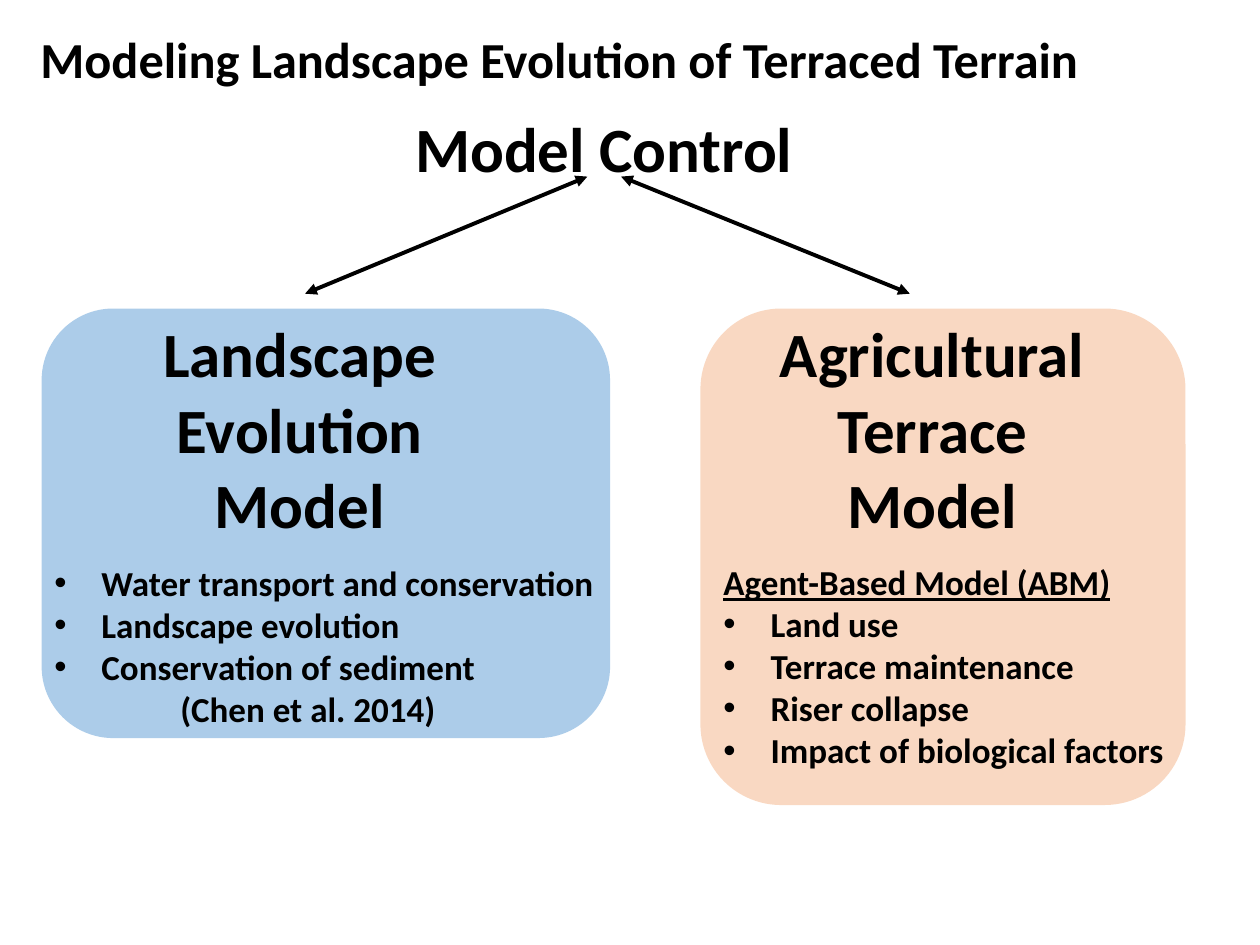
"""Build the slide on modeling the landscape evolution of terraced terrain."""
import pptx
import pptx.dml.color
import pptx.enum.shapes
import pptx.enum.text
import pptx.oxml.ns
import pptx.util
from lxml import etree
from pptx.util import Cm

BLACK = pptx.dml.color.RGBColor(0x00, 0x00, 0x00)
BLUE = pptx.dml.color.RGBColor(0x5B, 0x9B, 0xD5)
ORANGE = pptx.dml.color.RGBColor(0xF4, 0xB1, 0x83)
qn = pptx.oxml.ns.qn


def format_text(text_frame, size, alignment):
    text_frame.word_wrap = True
    text_frame.auto_size = pptx.enum.text.MSO_AUTO_SIZE.NONE
    for paragraph in text_frame.paragraphs:
        paragraph.alignment = alignment
        paragraph.space_before = pptx.util.Pt(0)
        for run in paragraph.runs:
            run.font.name = "Calibri"
            run.font.size = pptx.util.Pt(size)
            run.font.bold = True
            run.font.color.rgb = BLACK


def add_heading(slide, text, left, top, width, height):
    heading = slide.shapes.add_textbox(left, top, width, height)
    heading.text_frame.text = text
    format_text(heading.text_frame, 36, pptx.enum.text.PP_ALIGN.CENTER)


presentation = pptx.Presentation()
presentation.slide_width = Cm(25.4)
presentation.slide_height = Cm(19.05)
slide = presentation.slides.add_slide(presentation.slide_layouts[3])
title, *lists = slide.placeholders

title.left, title.top, title.width, title.height = Cm(0.56), Cm(0.03), Cm(23.27), Cm(2.46)
title.text_frame.text = "Modeling Landscape Evolution of Terraced Terrain"
title.text_frame.vertical_anchor = pptx.enum.text.MSO_ANCHOR.MIDDLE
title.text_frame.paragraphs[0].line_spacing = 0.9
format_text(title.text_frame, 28.8, pptx.enum.text.PP_ALIGN.LEFT)

add_heading(slide, "Model Control", Cm(7.54), Cm(2.08), Cm(9.27), Cm(1.8))

models = [
    ("Landscape Evolution Model", BLUE, 50,
     (0.84, 11.46, 8.66), 2.31, (0.84, 11.2, 12.42, 3.68),
     ["Water transport and conservation", "Landscape evolution",
      "Conservation of sediment", "\t(Chen et al. 2014)"], 3),
    ("Agricultural Terrace Model", ORANGE, 49,
     (14.12, 9.78, 10.01), 15.06, (14.33, 11.18, 10.11, 4.52),
     ["Agent-Based Model (ABM)", "Land use", "Terrace maintenance",
      "Riser collapse", "Impact of biological factors"], 0),
]
for body, model in zip(lists, models):
    name, color, opacity, panel_box, heading_left, list_box, lines, plain_line = model
    left, width, height = map(Cm, panel_box)
    panel = slide.shapes.add_shape(
        pptx.enum.shapes.MSO_SHAPE.ROUNDED_RECTANGLE, left, Cm(6.22), width, height)
    panel.shadow.inherit = False
    panel.fill.solid()
    panel.fill.fore_color.rgb = color
    color_element = panel.fill._xPr.find(".//" + qn("a:srgbClr"))
    etree.SubElement(color_element, qn("a:alpha"), val=str(opacity * 1000))
    panel.line.fill.background()

    add_heading(slide, name, Cm(heading_left), Cm(6.22), Cm(7.47), Cm(4.88))

    slide.shapes._spTree.append(body._element)
    body.left, body.top, body.width, body.height = map(Cm, list_box)
    body.text_frame.text = "\n".join(lines)
    for index, paragraph in enumerate(body.text_frame.paragraphs):
        properties = paragraph._p.get_or_add_pPr()
        bulleted = index != plain_line
        properties.set("marL", str(Cm(0.95) if bulleted else 0))
        properties.set("indent", str(-Cm(0.95) if bulleted else 0))
        properties.set("defTabSz", str(Cm(2.54)))
        if bulleted:
            etree.SubElement(properties, qn("a:buFont"), typeface="Arial")
            etree.SubElement(properties, qn("a:buChar"), char="•")
        else:
            etree.SubElement(properties, qn("a:buNone"))
    format_text(body.text_frame, 20, pptx.enum.text.PP_ALIGN.LEFT)

lists[1].text_frame.paragraphs[0].runs[0].font.underline = True

for start, end in [(11.84, 6.15), (12.52, 18.34)]:
    arrow = slide.shapes.add_connector(
        pptx.enum.shapes.MSO_CONNECTOR.STRAIGHT, Cm(start), Cm(3.56), Cm(end), Cm(5.92))
    arrow.line.color.rgb = BLACK
    arrow.line.width = pptx.util.Pt(2.25)
    line_element = arrow.line._get_or_add_ln()
    for tag in ("a:headEnd", "a:tailEnd"):
        etree.SubElement(line_element, qn(tag), type="triangle")
    etree.SubElement(arrow._element.spPr, qn("a:effectLst"))

presentation.save("out.pptx")
